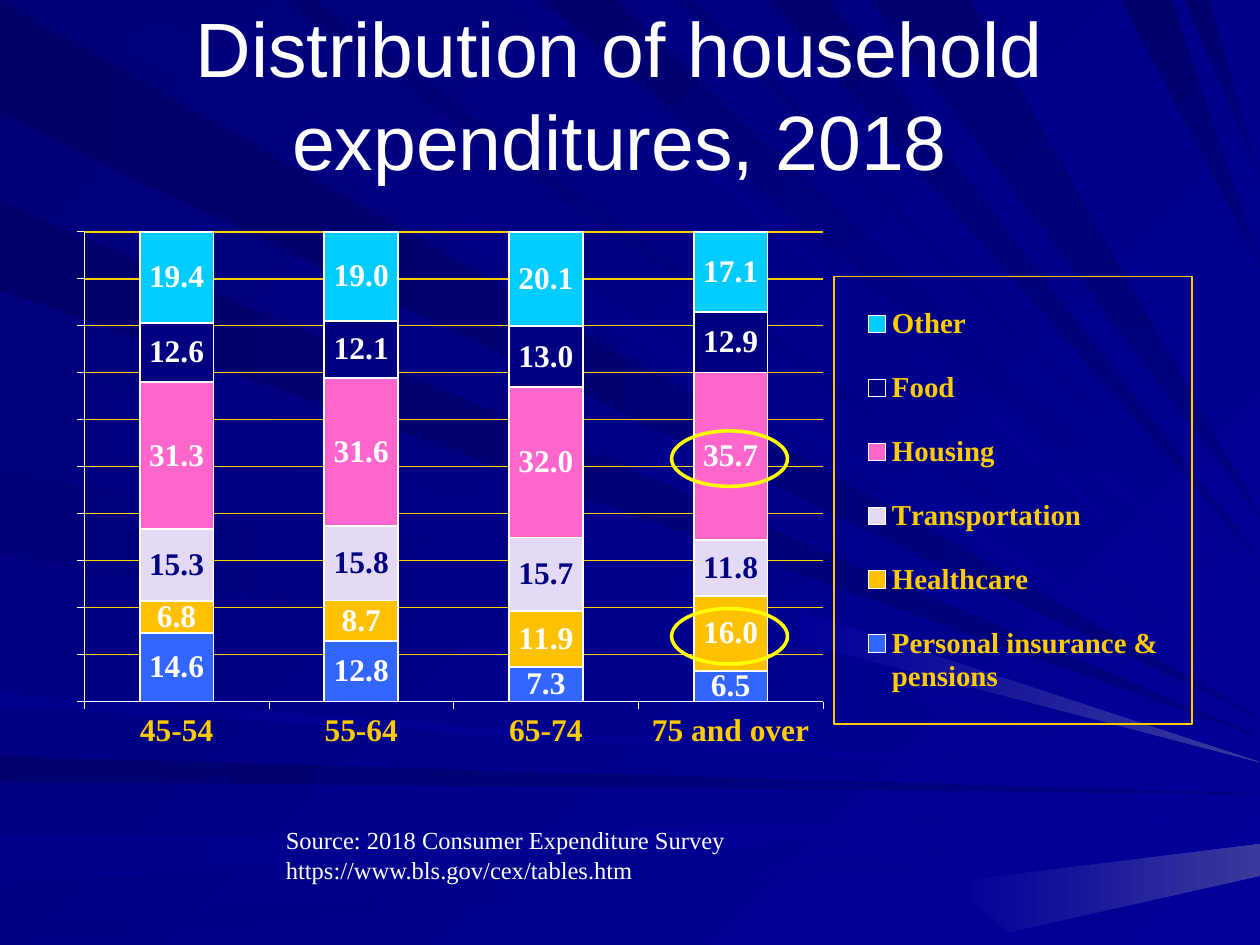
import pptx
import pptx.chart.data
import pptx.dml.color
import pptx.enum.chart
import pptx.enum.shapes
import pptx.enum.text
import pptx.oxml.ns
import pptx.util
from lxml import etree
from pptx.util import Inches, Pt

SERIF = "Times New Roman"
WHITE, GOLD, NAVY, BLUE = "FFFFFF", "FFCC00", "000080", "000099"
WIDTH, HEIGHT = 10, 7.5

LEFT_RAYS = [
    (0, 0.9, 5.7, "000069", NAVY),
    (1.6, 2.3, 5.85, "00006B", NAVY),
    (2.8, 3.4, 6, "00007E", BLUE),
    (3.7, 4.4, 6.06, "00007B", BLUE),
    (5.5, 5.6, 6.2, "00008E", BLUE),
    (6, 6.2, 6.3, "000071", NAVY),
    (6.65, 7, 6.5, "00008C", BLUE),
    (7.35, 7.5, 6.6, "000085", BLUE),
]
TOP_RAYS = [
    (0.3, 1, 5.6, "00007B", BLUE),
    (2.25, 2.5, 5.5, "000070", BLUE),
    (4, 4.2, 5.2, "000083", BLUE),
    (4.3, 4.9, 4.9, "00006D", BLUE),
    (5.4, 5.5, 4.6, "000073", BLUE),
    (6.1, 6.6, 4.45, "000073", NAVY),
    (6.9, 7.7, 4.1, "000073", NAVY),
    (8.9, 9.3, 2.1, "00006B", NAVY),
    (9.4, 9.6, 1.4, "00006D", NAVY),
]
GLOWS = [
    [(6.35, 4.85), (6.35, 5.1), (10, 6.05)],
    [(7.55, 7), (8, 7.4), (10, 6.95), (10, 6.7)],
]

AGE_GROUPS = ["45-54", "55-64", "65-74", "75 and over"]
EXPENDITURES = [
    ("Personal insurance & pensions", [14.6, 12.8, 7.3, 6.5], "3366FF", WHITE),
    ("Healthcare", [6.8, 8.7, 11.9, 16], "FFC000", WHITE),
    ("Transportation", [15.3, 15.8, 15.7, 11.8], "E5DAF6", NAVY),
    ("Housing", [31.3, 31.6, 32, 35.7], "FF66CC", WHITE),
    ("Food", [12.6, 12.1, 13, 12.9], NAVY, WHITE),
    ("Other", [19.4, 19, 20.1, 17.1], "00CCFF", WHITE),
]


def color(hex_text):
    return pptx.dml.color.RGBColor.from_string(hex_text)


def set_font(font, name, size, hex_text, bold=False):
    font.name = name
    font.size = Pt(size)
    font.bold = bold
    font.color.rgb = color(hex_text)


def set_line(line, hex_text, width):
    line.color.rgb = color(hex_text)
    line.width = Pt(width)


def set_gradient(fill, start, end, angle):
    fill.gradient()
    fill.gradient_angle = angle
    for stop, hex_text in zip(fill.gradient_stops, (start, end)):
        stop.color.rgb = color(hex_text)


def add_ray(page, corners, start, end, angle):
    points = [(Inches(x), Inches(y)) for x, y in corners]
    builder = page.shapes.build_freeform(*points[0])
    builder.add_line_segments(points[1:], close=True)
    ray = builder.convert_to_shape()
    ray.shadow.inherit = False
    set_gradient(ray.fill, start, end, angle)
    ray.line.fill.background()


def add_background(page):
    set_gradient(page.background.fill, "000078", BLUE, 315)
    for upper, lower, tip, start, end in LEFT_RAYS:
        add_ray(page, [(0, upper), (0, lower), (WIDTH, tip)], start, end, 0)
    for near, far, tip, start, end in TOP_RAYS:
        add_ray(page, [(near, 0), (far, 0), (WIDTH, tip)], start, end, 315)
    for corners in GLOWS:
        add_ray(page, corners, BLUE, "39399E", 0)


def add_text(page, area, text, name, size, align, anchor):
    box = page.shapes.add_textbox(*map(Inches, area))
    frame = box.text_frame
    frame.word_wrap = True
    frame.vertical_anchor = anchor
    para = frame.paragraphs[0]
    para.text = text
    para.alignment = align
    for span in para.runs:
        set_font(span.font, name, size, WHITE)


def add_child(parent, tag, **attributes):
    return etree.SubElement(parent, pptx.oxml.ns.qn(tag), **attributes)


def set_layout(element, index, **settings):
    tag = pptx.oxml.ns.qn("c:layout")
    for old in element.findall(tag):
        element.remove(old)
    layout = etree.Element(tag)
    element.insert(index, layout)
    manual = add_child(layout, "c:manualLayout")
    for name, value in settings.items():
        add_child(manual, f"c:{name}", val=str(value))


def style_axes(chart):
    for axis in (chart.category_axis, chart.value_axis):
        axis.major_tick_mark = pptx.enum.chart.XL_TICK_MARK.OUTSIDE
        set_line(axis.format.line, WHITE, 0.25)
        set_font(axis.tick_labels.font, SERIF, 18, GOLD, True)
    chart.value_axis.tick_label_position = pptx.enum.chart.XL_TICK_LABEL_POSITION.NONE
    chart.value_axis.has_major_gridlines = True
    set_line(chart.value_axis.major_gridlines.format.line, GOLD, 1)


def style_legend(chart):
    chart.has_legend = True
    legend = chart.legend
    legend.position = pptx.enum.chart.XL_LEGEND_POSITION.CORNER
    legend.include_in_layout = False
    set_font(legend.font, SERIF, 16.5, GOLD, True)
    element = legend._element
    set_layout(element, 1, xMode="edge", yMode="edge", x=0.68, y=0.1, w=0.32, h=0.8)
    properties = etree.Element(pptx.oxml.ns.qn("c:spPr"))
    line = add_child(properties, "a:ln", w=str(Pt(1)))
    add_child(add_child(line, "a:solidFill"), "a:srgbClr", val=GOLD)
    element.find(pptx.oxml.ns.qn("c:txPr")).addprevious(properties)


def add_expenditure_chart(page):
    data = pptx.chart.data.CategoryChartData(number_format="0.0")
    data.categories = AGE_GROUPS
    for name, values, _, _ in EXPENDITURES:
        data.add_series(name, values)
    kind = pptx.enum.chart.XL_CHART_TYPE.COLUMN_STACKED_100
    area = map(Inches, (0.58, 1.75, 8.89, 4.44))
    chart = page.shapes.add_chart(kind, *area, data).chart
    chart.has_title = False
    set_font(chart.font, SERIF, 18, WHITE, True)
    plot = chart.plots[0]
    plot.gap_width = 150
    plot.overlap = 100
    plot.vary_by_categories = False
    for series, (_, _, fill, label) in zip(plot.series, EXPENDITURES):
        series.format.fill.solid()
        series.format.fill.fore_color.rgb = color(fill)
        set_line(series.format.line, WHITE, 1)
        labels = series.data_labels
        labels.show_value = True
        labels.number_format = "0.0"
        labels.number_format_is_linked = False
        set_font(labels.font, SERIF, 18, label, True)
    style_axes(chart)
    style_legend(chart)
    set_layout(chart._chartSpace.chart.plotArea, 0, layoutTarget="inner",
               xMode="edge", yMode="edge", x=0.01, y=0.02, w=0.66, h=0.84)


def add_highlight(page, top):
    area = map(Inches, (5.33, top, 0.92, 0.44))
    ring = page.shapes.add_shape(pptx.enum.shapes.MSO_SHAPE.OVAL, *area)
    ring.shadow.inherit = False
    ring.fill.background()
    set_line(ring.line, "FFFF00", 2)


def main():
    deck = pptx.Presentation()
    deck.slide_width, deck.slide_height = Inches(WIDTH), Inches(HEIGHT)
    page = deck.slides.add_slide(deck.slide_layouts[6])
    add_background(page)
    align, anchor = pptx.enum.text.PP_ALIGN, pptx.enum.text.MSO_ANCHOR
    add_text(page, (0.17, 0.27, 9.5, 0.94), "Distribution of household expenditures, 2018",
             "Arial", 44, align.CENTER, anchor.MIDDLE)
    add_expenditure_chart(page)
    add_text(page, (2.17, 6.5, 5.25, 0.57),
             "Source: 2018 Consumer Expenditure Survey\vhttps://www.bls.gov/cex/tables.htm",
             SERIF, 14, align.LEFT, anchor.TOP)
    for top in (4.83, 3.42):
        add_highlight(page, top)
    deck.save("out.pptx")


if __name__ == "__main__":
    main()
